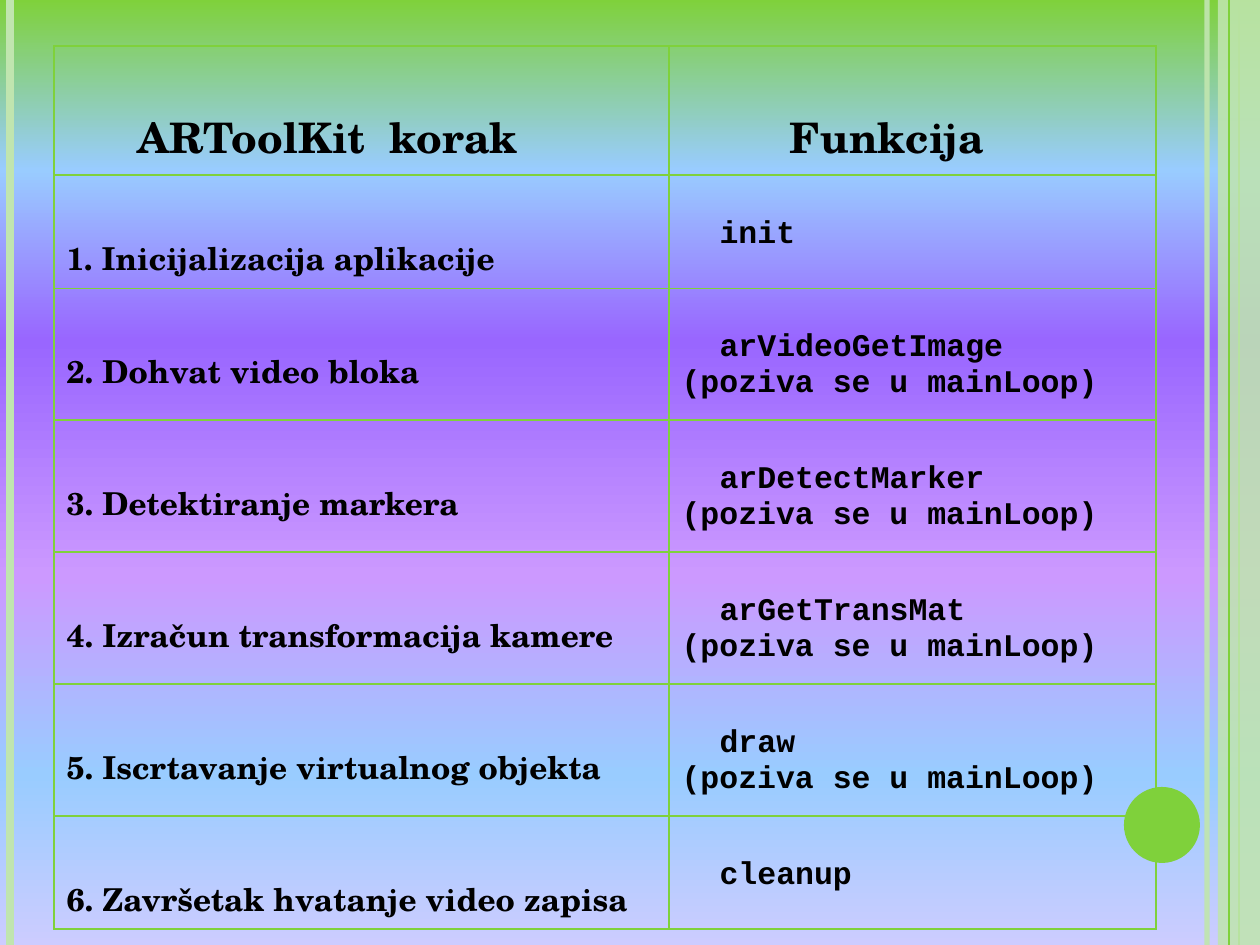
import pptx
import pptx.util
import pptx.dml.color
import pptx.enum.shapes
import pptx.oxml
import pptx.oxml.ns
import lxml.etree

PX = 914400 // 126
COLORS = {"green": "7FD13B", "pale": "C0E5AF", "text": "000000"}
BACKGROUND = [(0, "7FD13B"), (18, "99CCFF"), (36, "9966FF"),
              (61, "CC99FF"), (82, "99CCFF"), (100, "CCCCFF")]
HEADING = {"name": "TeX Gyre Schola", "size": pptx.util.Pt(24), "bold": True}
STEP = {"name": "TeX Gyre Schola", "size": pptx.util.Pt(18), "bold": True}
CODE = {"name": "Courier New", "size": pptx.util.Pt(18), "bold": True}
LOOP = "(poziva se u mainLoop)"
STEPS = [
    ("1. Inicijalizacija aplikacije", ["init"]),
    ("2. Dohvat video bloka", ["arVideoGetImage", LOOP]),
    ("3. Detektiranje markera", ["arDetectMarker", LOOP]),
    ("4. Izračun transformacija kamere", ["arGetTransMat", LOOP]),
    ("5. Iscrtavanje virtualnog objekta", ["draw", LOOP]),
    ("6. Završetak hvatanje video zapisa", ["cleanup"]),
]
COLUMNS = [615, 487]
ROWS = [126, 113, 132, 132, 132, 132, 113]


def rgb(name):
    return pptx.dml.color.RGBColor.from_string(COLORS[name])


def child(parent, tag, **attributes):
    element = lxml.etree.SubElement(parent, pptx.oxml.ns.qn(tag))
    for key, value in attributes.items():
        element.set(key, str(value))
    return element


def set_alpha(fill_parent, percent):
    color = next(fill_parent.iter(pptx.oxml.ns.qn("a:srgbClr")))
    child(color, "a:alpha", val=percent * 1000)


def paint_background(page):
    fill = page.background.fill
    fill.gradient()
    gradient = page.background._cSld.find(".//" + pptx.oxml.ns.qn("a:gradFill"))
    for part in list(gradient):
        gradient.remove(part)
    stops = child(gradient, "a:gsLst")
    for position, color in BACKGROUND:
        stop = child(stops, "a:gs", pos=position * 1000)
        child(stop, "a:srgbClr", val=color)
    child(gradient, "a:lin", ang=90 * 60000, scaled=0)


def add_stripe(page, x, height, color, points, opacity=100):
    line = page.shapes.add_connector(
        pptx.enum.shapes.MSO_CONNECTOR.STRAIGHT, x * PX, 0, x * PX, height * PX)
    line.line.color.rgb = rgb(color)
    line.line.width = pptx.util.Pt(points)
    if opacity < 100:
        set_alpha(line._element.spPr, opacity)
    child(line._element.spPr, "a:effectLst")


def add_plain(page, kind, box, color, opacity=100):
    shape = page.shapes.add_shape(kind, *(length * PX for length in box))
    shape.shadow.inherit = False
    shape.fill.solid()
    shape.fill.fore_color.rgb = rgb(color)
    shape.line.fill.background()
    if opacity < 100:
        set_alpha(shape._element.spPr, opacity)


def add_decoration(page, width, height):
    kinds = pptx.enum.shapes.MSO_SHAPE
    add_stripe(page, width - 53, height, "pale", 3, 93)
    add_stripe(page, 10, height, "pale", 4.5)
    add_stripe(page, width - 31 + 10, height, "green", 1.5)
    add_plain(page, kinds.RECTANGLE, (width - 42, 0, 42, height), "pale", 87)
    add_stripe(page, width - 31, height, "green", 0.75)
    add_plain(page, kinds.OVAL, (width - 136, height - 158, 76, 76), "green")


def set_borders(cell):
    properties = cell._tc.get_or_add_tcPr()
    for side in ("a:lnL", "a:lnR", "a:lnT", "a:lnB"):
        border = child(properties, side, w=pptx.util.Pt(1))
        child(child(border, "a:solidFill"), "a:srgbClr", val=COLORS["green"])


def fill_cell(cell, lines, font, top, indents):
    set_borders(cell)
    cell.fill.background()
    cell.margin_top = top * PX
    frame = cell.text_frame
    for number, (line, indent) in enumerate(zip(lines, indents)):
        para = frame.add_paragraph() if number else frame.paragraphs[0]
        para._p.get_or_add_pPr().set("marL", str(indent * PX))
        span = para.add_run()
        span.text = line
        span.font.color.rgb = rgb("text")
        for key, value in font.items():
            setattr(span.font, key, value)


def add_steps_table(page, left, top):
    table = page.shapes.add_table(
        len(ROWS), len(COLUMNS), left * PX, top * PX,
        sum(COLUMNS) * PX, sum(ROWS) * PX).table
    table.first_row = table.horz_banding = False
    for column, width in zip(table.columns, COLUMNS):
        column.width = width * PX
    for row, height in zip(table.rows, ROWS):
        row.height = height * PX

    # Headings
    fill_cell(table.cell(0, 0), ["ARToolKit  korak"], HEADING, 58, [71])
    fill_cell(table.cell(0, 1), ["Funkcija"], HEADING, 58, [108])

    # Steps and their functions
    for number, (step, functions) in enumerate(STEPS, 1):
        fill_cell(table.cell(number, 0), [step], STEP, 58, [0])
        fill_cell(table.cell(number, 1), functions, CODE, 42, [38, 0])


def main():
    deck = pptx.Presentation()
    width, height = 1260, 945
    deck.slide_width, deck.slide_height = pptx.util.Inches(10), pptx.util.Inches(7.5)
    page = deck.slides.add_slide(deck.slide_layouts[6])
    paint_background(page)
    add_decoration(page, width, height)
    add_steps_table(page, 54, 46)
    deck.save("out.pptx")


if __name__ == "__main__":
    main()
